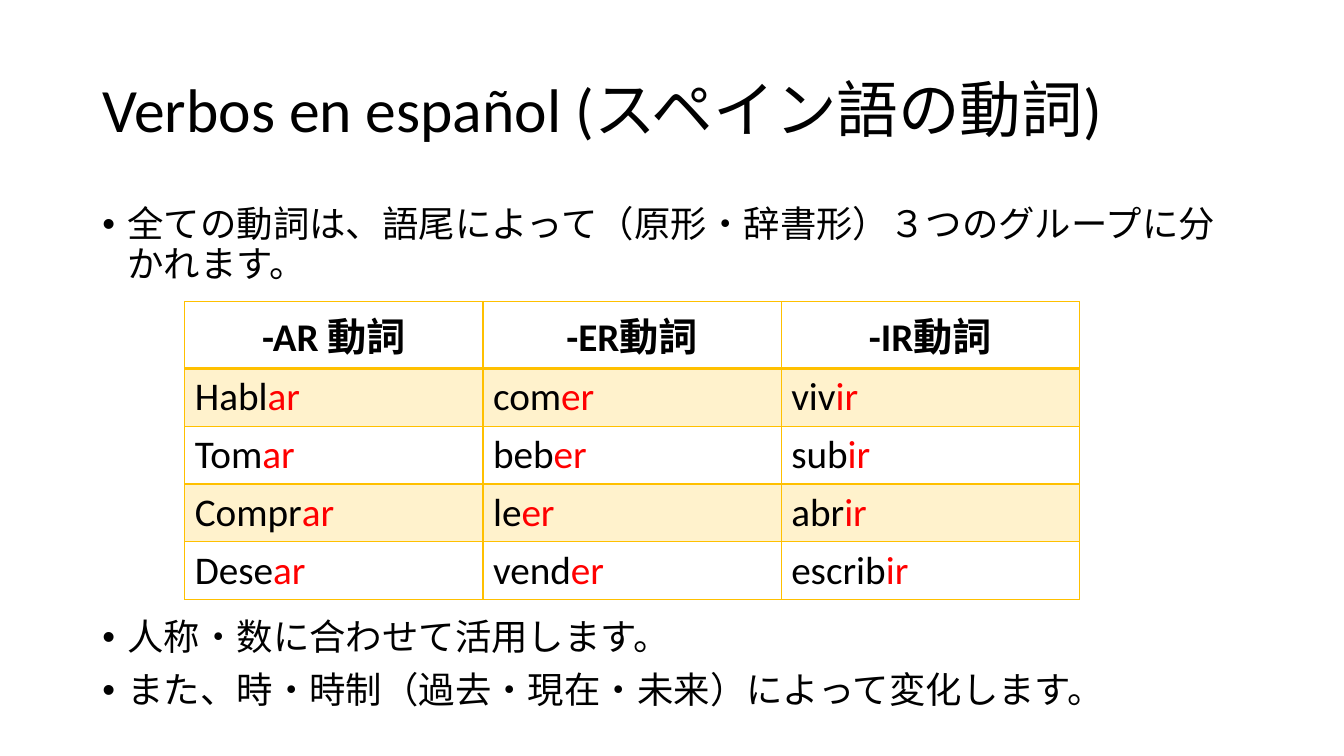
"""Build a slide that sorts Spanish verbs into three groups by ending."""
from dataclasses import dataclass

from lxml.etree import SubElement
from pptx import Presentation
from pptx.dml.color import RGBColor
from pptx.enum.text import MSO_ANCHOR as Anchor, PP_ALIGN as Align
from pptx.oxml.ns import qn
from pptx.util import Emu, Pt

PX = 9525
FONT = "Calibri"
BLACK = RGBColor(0x00, 0x00, 0x00)
RED = RGBColor(0xFF, 0x00, 0x00)
GOLD = RGBColor(0xFF, 0xC0, 0x00)
BAND_ALPHA = "20000"
BULLET_INDENT = 24
COLUMN_WIDTH, HEADER_HEIGHT, ROW_HEIGHT = 284, 64, 55


@dataclass(frozen=True)
class TextBlock:
    left: int
    top: int
    width: int
    height: int
    size: int
    lines: tuple[str, ...]
    bulleted: bool = True
    anchor: Anchor = Anchor.TOP


@dataclass(frozen=True)
class VerbGroup:
    heading: str
    ending: str
    stems: tuple[str, ...]


BLOCKS = (
    TextBlock(88, 38, 1104, 139, 44, ("Verbos en español (スペイン語の動詞)",), False, Anchor.MIDDLE),
    TextBlock(88, 192, 1104, 90, 26,
              ("全ての動詞は、語尾によって（原形・辞書形）３つのグループに分かれます。",)),
    TextBlock(88, 585, 1104, 118, 26,
              ("人称・数に合わせて活用します。",
               "また、時・時制（過去・現在・未来）によって変化します。")),
)
GROUPS = (
    VerbGroup("-AR 動詞", "ar", ("Habl", "Tom", "Compr", "Dese")),
    VerbGroup("-ER動詞", "er", ("com", "beb", "le", "vend")),
    VerbGroup("-IR動詞", "ir", ("viv", "sub", "abr", "escrib")),
)


def px(length: int) -> Emu:
    """Turn whole pixels into EMU."""
    return Emu(length * PX)


def add_run(paragraph, text: str, size: int, color: RGBColor = BLACK, bold: bool = False) -> None:
    """Append one styled run to a paragraph."""
    run = paragraph.add_run()
    run.text = text
    run.font.name = FONT
    run.font.size = Pt(size)
    run.font.bold = bold
    run.font.color.rgb = color


def add_bullet(paragraph) -> None:
    """Give a paragraph a round bullet with a hanging indent."""
    properties = paragraph._p.get_or_add_pPr()
    properties.set("marL", str(px(BULLET_INDENT)))
    properties.set("indent", str(-px(BULLET_INDENT)))
    SubElement(properties, qn("a:buFont"), typeface="Arial")
    SubElement(properties, qn("a:buChar"), char="•")


def draw_block(slide, block: TextBlock) -> None:
    """Draw a text block, one paragraph per line."""
    box = slide.shapes.add_textbox(px(block.left), px(block.top), px(block.width), px(block.height))
    frame = box.text_frame
    frame.word_wrap = True
    frame.vertical_anchor = block.anchor
    for index, line in enumerate(block.lines):
        paragraph = frame.add_paragraph() if index else frame.paragraphs[0]
        paragraph.line_spacing = 0.9
        if block.bulleted:
            paragraph.space_before = Pt(10)
            add_bullet(paragraph)
        add_run(paragraph, line, block.size)


def style_cell(cell, is_header: bool, is_banded: bool) -> None:
    """Set the borders and the fill of a cell."""
    properties = cell._tc.get_or_add_tcPr()
    for side in ("L", "R", "T", "B"):
        width = Pt(2) if is_header and side == "B" else Pt(1)
        border = SubElement(properties, qn(f"a:ln{side}"), w=str(width))
        SubElement(SubElement(border, qn("a:solidFill")), qn("a:srgbClr"), val=str(GOLD))
    if is_banded:
        cell.fill.solid()
        cell.fill.fore_color.rgb = GOLD
        color = properties.find(qn("a:solidFill")).find(qn("a:srgbClr"))
        SubElement(color, qn("a:alpha"), val=BAND_ALPHA)
    else:
        cell.fill.background()


def draw_verb_table(slide, left: int, top: int, groups: tuple[VerbGroup, ...]) -> None:
    """Draw the verb groups as table columns with red endings."""
    verb_count = len(groups[0].stems)
    frame = slide.shapes.add_table(
        verb_count + 1, len(groups), px(left), px(top),
        px(COLUMN_WIDTH * len(groups)), px(HEADER_HEIGHT + ROW_HEIGHT * verb_count))
    table = frame.table
    table.first_row = table.horz_banding = False
    for index, row in enumerate(table.rows):
        row.height = px(ROW_HEIGHT if index else HEADER_HEIGHT)
    for column, group in enumerate(groups):
        table.columns[column].width = px(COLUMN_WIDTH)
        heading = table.cell(0, column)
        style_cell(heading, True, False)
        heading.text_frame.paragraphs[0].alignment = Align.CENTER
        add_run(heading.text_frame.paragraphs[0], group.heading, 28, bold=True)
        for row, stem in enumerate(group.stems, start=1):
            verb = table.cell(row, column)
            style_cell(verb, False, row % 2 == 1)
            add_run(verb.text_frame.paragraphs[0], stem, 28)
            add_run(verb.text_frame.paragraphs[0], group.ending, 28, RED)


def main() -> None:
    """Build and save the slide."""
    presentation = Presentation()
    presentation.slide_width, presentation.slide_height = px(1280), px(720)
    slide = presentation.slides.add_slide(presentation.slide_layouts[6])
    for block in BLOCKS:
        draw_block(slide, block)
    draw_verb_table(slide, 176, 287, GROUPS)
    presentation.save("out.pptx")


if __name__ == "__main__":
    main()
